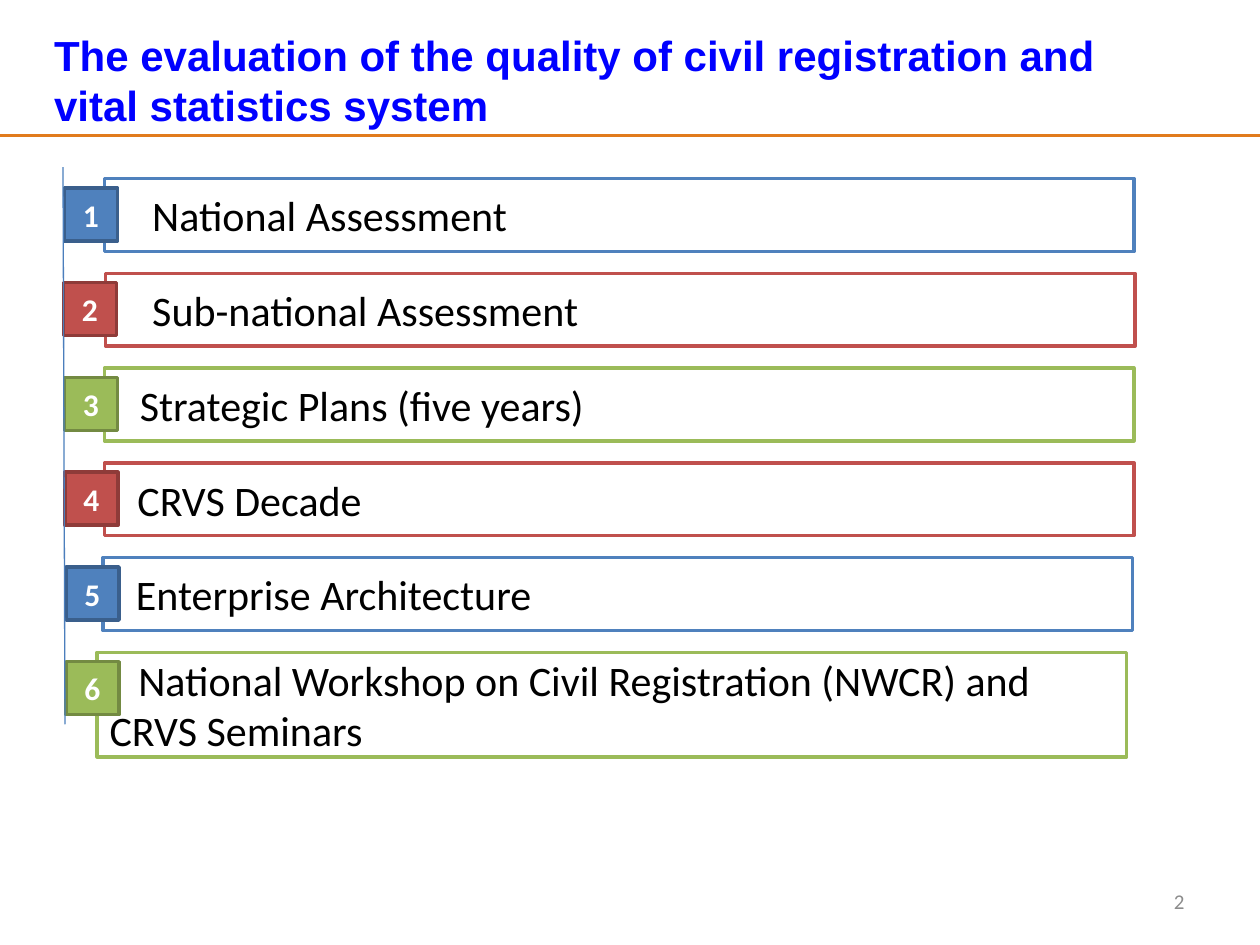
import pptx
import pptx.util
import pptx.dml.color
import pptx.enum.text
import pptx.enum.shapes
import pptx.oxml
from dataclasses import dataclass

Cm, Pt = pptx.util.Cm, pptx.util.Pt
Align = pptx.enum.text.PP_ALIGN
Anchor = pptx.enum.text.MSO_ANCHOR
Kind = pptx.enum.shapes.MSO_SHAPE
Link = pptx.enum.shapes.MSO_CONNECTOR


@dataclass(frozen=True)
class Theme:
    ink: str = "000000"
    paper: str = "FFFFFF"
    title: str = "0000FF"
    rule: str = "E17B1C"
    spine: str = "4B7EBC"
    mute: str = "8C8C8C"
    blue: tuple = ("4F81BD", "3A5F8C")
    red: tuple = ("C0504D", "8E3B39")
    green: tuple = ("9BBB59", "738A42")
    head: str = "Arial"
    body: str = "Calibri"
    large: int = 24
    mid: int = 18
    small: int = 12


THEME = Theme()

ROWS = [
    ("National Assessment", THEME.blue, 2.11, 1.3, 0.96, 0),
    ("Sub-national Assessment", THEME.red, 2.13, 1.28, 0.94, 0),
    ("Strategic Plans (five years)", THEME.green, 2.11, 1.3, 0.71, 0),
    ("CRVS Decade", THEME.red, 2.11, 1.31, 0.66, 0),
    ("Enterprise Architecture", THEME.blue, 2.08, 1.33, 0.66, 0),
    ("National Workshop on Civil Registration (NWCR) and CRVS Seminars",
     THEME.green, 1.96, 1.33, 0.25, 0.58),
]


def tint(code):
    return pptx.dml.color.RGBColor.from_string(code)


def write(shape, text, font=THEME.body, size=THEME.large, color=THEME.ink,
          bold=False, align=Align.LEFT, anchor=Anchor.MIDDLE,
          inset=0.25, indent=0, pitch=None):
    frame = shape.text_frame
    frame.word_wrap = True
    frame.auto_size = pptx.enum.text.MSO_AUTO_SIZE.NONE
    frame.vertical_anchor = anchor
    frame.margin_left, frame.margin_right = Cm(inset), Cm(0.25)
    frame.margin_top = frame.margin_bottom = Cm(0.13)
    frame.text = text
    for para in frame.paragraphs:
        para.alignment = align
        para.space_before = Pt(0)
        if pitch:
            para.line_spacing = Pt(pitch)
        if indent:
            para._p.get_or_add_pPr().set("indent", str(Cm(indent)))
        para.font.name, para.font.size = font, Pt(size)
        para.font.bold = bold
        para.font.color.rgb = tint(color)


def block(slide, left, top, width, height, fill, edge):
    shape = slide.shapes.add_shape(
        Kind.RECTANGLE, Cm(left), Cm(top), Cm(width), Cm(height))
    shape.shadow.inherit = False
    shape.fill.solid()
    shape.fill.fore_color.rgb = tint(fill)
    shape.line.color.rgb = tint(edge)
    shape.line.width = Pt(2)
    return shape


def stroke(slide, start, end, color, width):
    line = slide.shapes.add_connector(
        Link.STRAIGHT, *[Cm(n) for n in (*start, *end)])
    line.line.color.rgb = tint(color)
    line.line.width = Pt(width)
    line._element.spPr.append(pptx.oxml.parse_xml(
        '<a:effectLst xmlns:a='
        '"http://schemas.openxmlformats.org/drawingml/2006/main"/>'))


def header(slide, left, top, width, height):
    stroke(slide, (0, top + 2.29), (25.4, top + 2.29), THEME.rule, 1.65)
    title = slide.shapes.title
    title.left, title.top = Cm(left), Cm(top)
    title.width, title.height = Cm(width), Cm(height)
    write(title, "The evaluation of the quality of civil registration and\n"
          "vital statistics system", font=THEME.head, color=THEME.title,
          bold=True, anchor=Anchor.TOP, pitch=29)


def row(slide, top, height, num, text, hue, left, tab, inset, indent):
    fill, edge = hue
    bar = block(slide, left, top, 20.75, height, THEME.paper, fill)
    write(bar, text, inset=inset, indent=indent)
    badge = block(slide, tab, top + 0.19, 1.07, 1.07, fill, edge)
    write(badge, str(num), size=THEME.mid, color=THEME.paper, bold=True,
          align=Align.CENTER)


def steps(slide, top, pitch):
    for num, item in enumerate(ROWS, 1):
        height = 2.11 if num == len(ROWS) else 1.47
        row(slide, top + (num - 1) * pitch, height, num, *item)
    stroke(slide, (1.27, top - 0.23), (1.31, top + 11), THEME.spine, 0.75)


def footer(slide, left, top, width, height):
    box = slide.shapes.add_textbox(Cm(left), Cm(top), Cm(width), Cm(height))
    write(box, "2", size=THEME.small, color=THEME.mute, align=Align.RIGHT)


def main():
    deck = pptx.Presentation()
    deck.slide_width, deck.slide_height = Cm(25.4), Cm(19.05)
    slide = deck.slides.add_slide(deck.slide_layouts[5])
    header(slide, 0.84, 0.45, 21.92, 2.31)
    steps(slide, 3.6, 1.91)
    footer(slide, 18.2, 17.65, 5.93, 1.02)
    deck.save("out.pptx")


if __name__ == "__main__":
    main()
